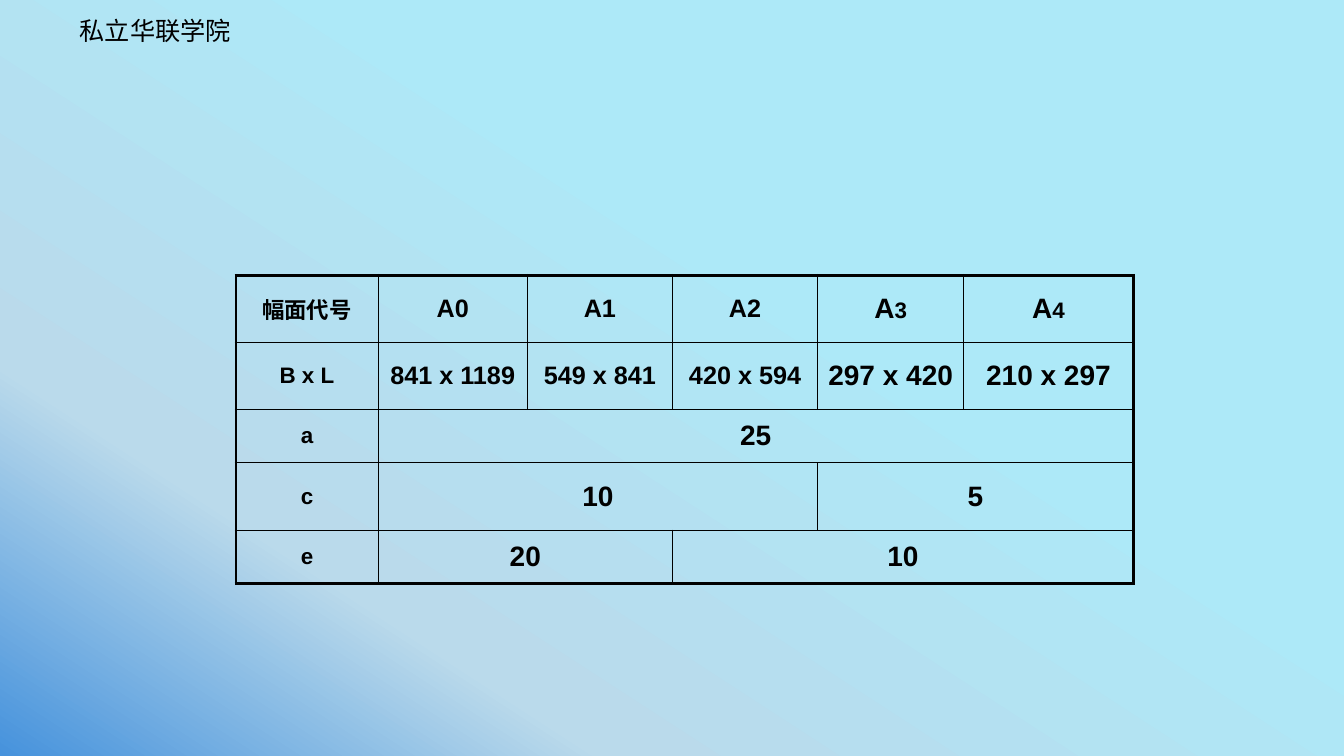
from lxml.etree import SubElement as Sub
from pptx import Presentation
from pptx.dml.color import RGBColor as RGB
from pptx.enum.text import MSO_ANCHOR as Anchor, PP_ALIGN as Align
from pptx.oxml.ns import qn
from pptx.util import Inches, Pt

WIDE, HIGH = 13.33, 7.5
HUES = {"ink": "000000", "blue": "4692DC", "mist": "BADAEB", "aqua": "ADE9F8"}
STOPS = [(0, "blue"), (24, "mist"), (62, "aqua")]
ANGLE = 57
SANS, HAN = "Arial", "Noto Sans CJK JP"
PLAIN = "{2D5ABB26-0587-4C30-8999-92F81FD0307C}"
THIN, THICK = 1, 2.25
COLS = [1.41, 1.48, 1.44, 1.44, 1.45, 1.68]
ROWS = [0.67, 0.66, 0.53, 0.67, 0.53]
CELLS = [
    [(1, [("幅面代号", 16)]), (1, [("A0", 18)]), (1, [("A1", 18)]),
     (1, [("A2", 18)]), (1, [("A", 20), ("3", 16)]), (1, [("A", 20), ("4", 16)])],
    [(1, [("B x L", 16)]), (1, [("841 x 1189", 18)]), (1, [("549 x 841", 18)]),
     (1, [("420 x 594", 18)]), (1, [("297 x 420", 20)]), (1, [("210 x 297", 20)])],
    [(1, [("a", 16)]), (5, [("25", 20)])],
    [(1, [("c", 16)]), (3, [("10", 20)]), (2, [("5", 20)])],
    [(1, [("e", 16)]), (2, [("20", 20)]), (3, [("10", 20)])],
]


def add_run(para, text, size, face, bold=False):
    run = para.add_run()
    run.text = text
    font = run.font
    font.size, font.name, font.bold = Pt(size), face, bold
    font.color.rgb = RGB.from_string(HUES["ink"])
    Sub(font._element, qn("a:ea"), typeface=HAN)


def paint_back(slide):
    fill = slide.background.fill
    fill.gradient()
    fill.gradient_angle = ANGLE
    stops = fill._fill._gradFill.find(qn("a:gsLst"))
    for old in list(stops):
        stops.remove(old)
    for share, hue in STOPS:
        stop = Sub(stops, qn("a:gs"), pos=str(share * 1000))
        Sub(stop, qn("a:srgbClr"), val=HUES[hue])


def add_label(slide, box):
    frame = slide.shapes.add_textbox(*map(Inches, box)).text_frame
    frame.word_wrap = True
    frame.margin_left = frame.margin_right = Inches(0.05)
    frame.margin_top = frame.margin_bottom = Inches(0.05)
    add_run(frame.paragraphs[0], "私立华联学院", 18, HAN)


def rule_cell(cell, edges):
    props = cell._tc.get_or_add_tcPr()
    for side, width in edges.items():
        line = Sub(props, qn(f"a:ln{side}"), w=str(Pt(width)))
        paint = Sub(line, qn("a:solidFill"))
        Sub(paint, qn("a:srgbClr"), val=HUES["ink"])
    cell.fill.background()


def fill_row(table, row, parts):
    col = 0
    for span, runs in parts:
        last = col + span - 1
        head = table.cell(row, col)
        if span > 1:
            head.merge(table.cell(row, last))
        for at in range(col, last + 1):
            edges = {}
            if at == col:
                edges["L"] = THIN if col else THICK
            if at in (col, last):
                edges["R"] = THICK if last == len(COLS) - 1 else THIN
            edges["T"] = THIN if row else THICK
            edges["B"] = THICK if row == len(ROWS) - 1 else THIN
            rule_cell(table.cell(row, at), edges)
        head.vertical_anchor = Anchor.MIDDLE
        para = head.text_frame.paragraphs[0]
        para.alignment = Align.CENTER
        for text, size in runs:
            add_run(para, text, size, SANS, True)
        col += span


def add_sizes(slide, left, top):
    box = map(Inches, (left, top, sum(COLS), sum(ROWS)))
    table = slide.shapes.add_table(len(ROWS), len(COLS), *box).table
    table.first_row = table.horz_banding = False
    table._tbl.tblPr.find(qn("a:tableStyleId")).text = PLAIN
    for col, width in zip(table.columns, COLS):
        col.width = Inches(width)
    for row, height in zip(table.rows, ROWS):
        row.height = Inches(height)
    for row, parts in enumerate(CELLS):
        fill_row(table, row, parts)


def main():
    deck = Presentation()
    deck.slide_width, deck.slide_height = Inches(WIDE), Inches(HIGH)
    slide = deck.slides.add_slide(deck.slide_layouts[6])
    paint_back(slide)
    add_label(slide, (0.74, 0.1, 0.22 * WIDE, 0.4))
    add_sizes(slide, 2.34, 2.73)
    deck.save("out.pptx")


if __name__ == "__main__":
    main()
